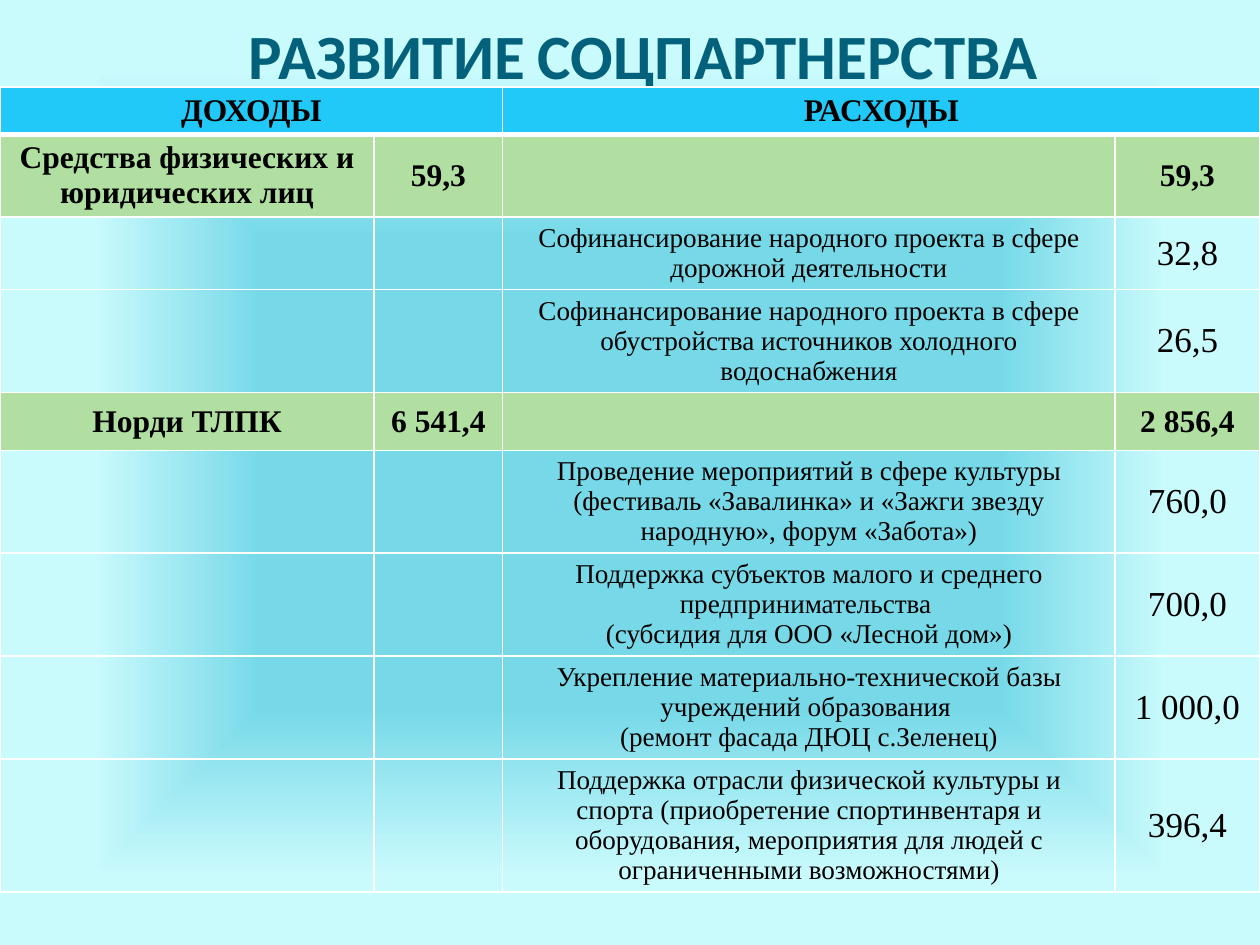
from lxml import etree
from pptx import Presentation
from pptx import util as u
from pptx.dml.color import RGBColor
from pptx.enum import text
from pptx.oxml import parse_xml
from pptx.oxml.ns import qn

NS = 'xmlns:a="http://schemas.openxmlformats.org/drawingml/2006/main"'
BLUE, GREEN, WHITE, BLACK = "20C9F8", "B0DFA1", "FFFFFF", "000000"

COLUMN_WIDTHS = [213.84, 73.44, 349.92, 82.8]
ROW_HEIGHTS = [26.8, 47, 41.5, 58.8, 33, 58.8, 58.8, 58.8, 76]

# A group row: (source, income, expense); a detail row: (paragraphs, expense)
ROWS = [
    ("Средства физических и юридических лиц", "59,3", "59,3"),
    (["Софинансирование народного проекта в сфере дорожной деятельности"], "32,8"),
    (["Софинансирование народного проекта в сфере обустройства источников "
      "холодного водоснабжения"], "26,5"),
    ("Норди ТЛПК", "6 541,4", "2 856,4"),
    (["Проведение мероприятий в сфере культуры (фестиваль «Завалинка» и "
      "«Зажги звезду народную», форум «Забота»)"], "760,0"),
    (["Поддержка субъектов малого и среднего предпринимательства ",
      "(субсидия для ООО «Лесной дом»)"], "700,0"),
    (["Укрепление материально-технической базы учреждений образования ",
      "(ремонт фасада ДЮЦ с.Зеленец)"], "1 000,0"),
    (["Поддержка отрасли физической культуры и спорта (приобретение "
      "спортинвентаря и оборудования, мероприятия для людей с "
      "ограниченными возможностями)"], "396,4"),
]


def color(value):
    return RGBColor.from_string(value)


class SlideBuilder:
    title_font = "Calibri"
    table_font = "Times New Roman"

    def __init__(self, deck):
        self.slide = deck.slides.add_slide(deck.slide_layouts[5])

    def background(self, inner, outer):
        """Fill the slide with a rectangular gradient around its centre."""
        self.slide.background.fill.solid()
        solid = self.slide.element.find(".//" + qn("p:bgPr")).find(qn("a:solidFill"))
        gradient = parse_xml(
            f'<a:gradFill {NS} rotWithShape="1"><a:gsLst>'
            f'<a:gs pos="50000"><a:srgbClr val="{inner}"/></a:gs>'
            f'<a:gs pos="85000"><a:srgbClr val="{outer}"/></a:gs></a:gsLst>'
            '<a:path path="shape"><a:fillToRect l="50000" t="50000" '
            'r="50000" b="50000"/></a:path></a:gradFill>')
        solid.getparent().replace(solid, gradient)

    def add_lines(self, frame, lines, size, font, bold=False, ink=BLACK):
        for index, line in enumerate(lines):
            para = frame.add_paragraph() if index else frame.paragraphs[0]
            para.alignment = text.PP_ALIGN.CENTER
            span = para.add_run()
            span.text = line
            span.font.name = font
            span.font.size = u.Pt(size)
            span.font.bold = bold
            span.font.color.rgb = color(ink)

    def title(self, words, left, top, width, height):
        box = self.slide.shapes.title
        box.left, box.top = u.Pt(left), u.Pt(top)
        box.width, box.height = u.Pt(width), u.Pt(height)
        box.text_frame.vertical_anchor = text.MSO_ANCHOR.MIDDLE
        self.add_lines(box.text_frame, [words], 36, self.title_font, True, "04617B")
        for properties in box.element.iter(qn("a:rPr")):
            properties.set("cap", "small")

    def table(self, left, top, widths, heights):
        table = self.slide.shapes.add_table(
            len(heights), len(widths), u.Pt(left), u.Pt(top),
            u.Pt(sum(widths)), u.Pt(sum(heights))).table
        table.horz_banding = False
        for column, width in zip(table.columns, widths):
            column.width = u.Pt(width)
        for row, height in zip(table.rows, heights):
            row.height = u.Pt(height)
        for number, row in enumerate(table.rows):
            for cell in row.cells:
                cell.fill.background()
                self.borders(cell, top=3 if number == 1 else 1,
                             bottom=3 if number == 0 else 1)
        return table

    def borders(self, cell, top, bottom):
        properties = cell._tc.get_or_add_tcPr()
        edges = {"lnL": 1, "lnR": 1, "lnT": top, "lnB": bottom}
        for index, (edge, width) in enumerate(edges.items()):
            line = etree.Element(qn("a:" + edge), w=str(int(u.Pt(width))))
            fill = etree.SubElement(line, qn("a:solidFill"))
            etree.SubElement(fill, qn("a:srgbClr"), val=WHITE)
            properties.insert(index, line)

    def cell(self, cell, lines, size=18, bold=False,
             anchor=text.MSO_ANCHOR.MIDDLE):
        cell.vertical_anchor = anchor
        self.add_lines(cell.text_frame, lines, size, self.table_font, bold)

    def shade(self, cells, fill):
        for cell in cells:
            cell.fill.solid()
            cell.fill.fore_color.rgb = color(fill)


def main():
    deck = Presentation()
    deck.slide_width, deck.slide_height = u.Pt(720), u.Pt(540)
    page = SlideBuilder(deck)
    page.background("77D9E8", "C9FAFC")
    page.title("РАЗВИТИЕ СОЦПАРТНЕРСТВА", 73.44, 0, 588.24, 61.92)

    table = page.table(0, 49.68, COLUMN_WIDTHS, ROW_HEIGHTS)
    page.shade(table.rows[0].cells, BLUE)
    for column, heading in ((0, "ДОХОДЫ"), (2, "РАСХОДЫ")):
        table.cell(0, column).merge(table.cell(0, column + 1))
        page.cell(table.cell(0, column), [heading], bold=True,
                  anchor=text.MSO_ANCHOR.TOP)

    for number, values in enumerate(ROWS, start=1):
        if len(values) == 3:
            page.shade(table.rows[number].cells, GREEN)
            for column, value in zip((0, 1, 3), values):
                page.cell(table.cell(number, column), [value], bold=True)
        else:
            purpose, amount = values
            page.cell(table.cell(number, 2), purpose, 15.5)
            page.cell(table.cell(number, 3), [amount], 20)

    deck.save("out.pptx")


if __name__ == "__main__":
    main()
